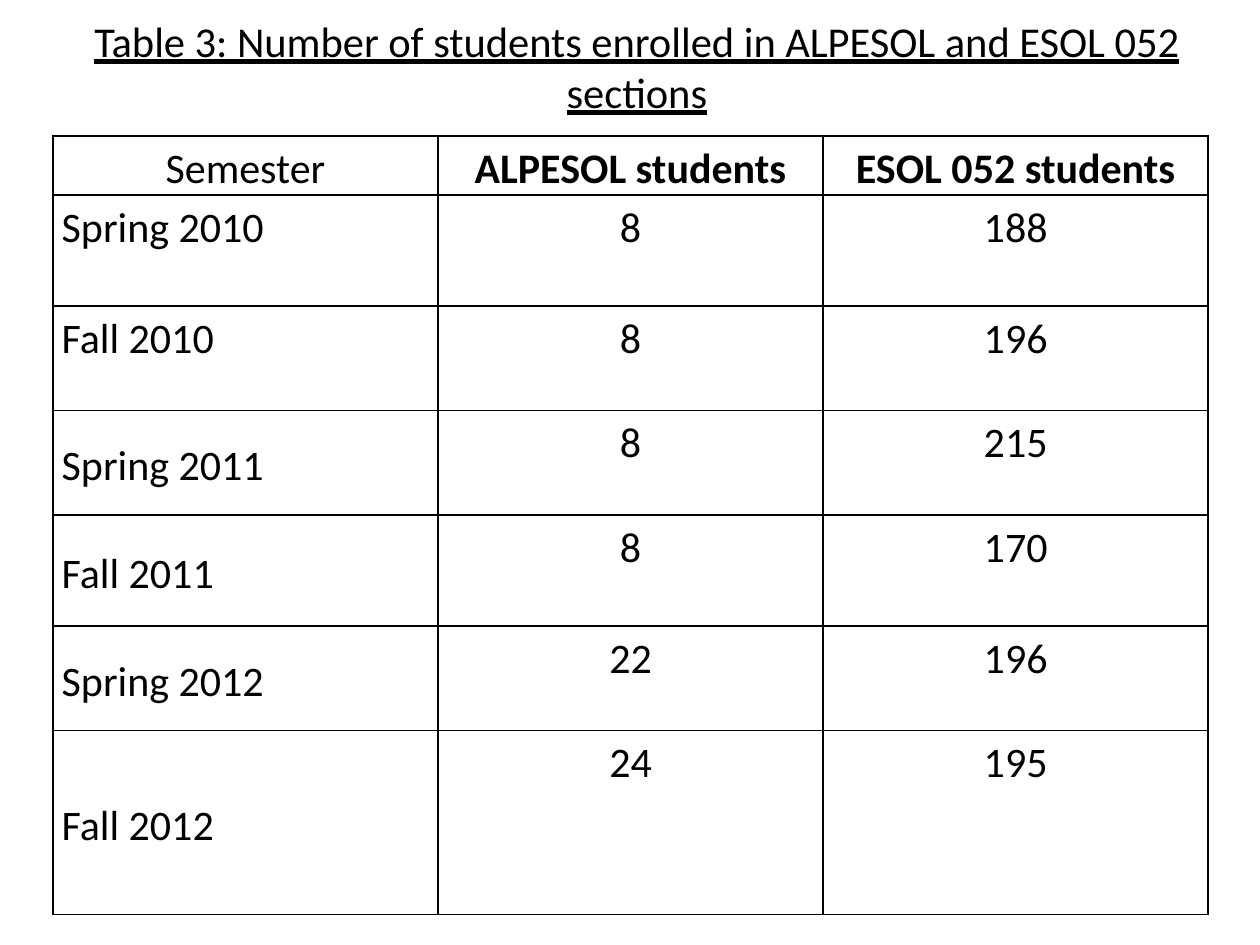
from lxml import etree
from pptx import Presentation
from pptx.dml.color import RGBColor
from pptx.enum.text import MSO_ANCHOR, MSO_AUTO_SIZE, PP_ALIGN
from pptx.oxml.ns import qn
from pptx.util import Inches, Pt

LEFT, CENTER = PP_ALIGN.LEFT, PP_ALIGN.CENTER
TOP, MIDDLE = MSO_ANCHOR.TOP, MSO_ANCHOR.MIDDLE
NO_AUTOFIT = MSO_AUTO_SIZE.NONE

FONT = "Calibri"
BLACK = "000000"
TITLE = "Table 3: Number of students enrolled in ALPESOL and ESOL 052 sections"
ROWS = [
    ("Semester", "ALPESOL students", "ESOL 052 students"),
    ("Spring 2010", "8", "188"),
    ("Fall 2010", "8", "196"),
    ("Spring 2011", "8", "215"),
    ("Fall 2011", "8", "170"),
    ("Spring 2012", "22", "196"),
    ("Fall 2012", "24", "195"),
]
ROW_HEIGHTS = [0.46, 0.88, 0.83, 0.83, 0.88, 0.83, 1.46]
FIRST_MIDDLE_ROW = 3  # from here on the semester names are centred vertically


def rgb(value):
    return RGBColor.from_string(value)


def add_run(p, text, size, bold=False, underline=False):
    r = p.add_run()
    r.text = text
    r.font.name = FONT
    r.font.size = Pt(size)
    r.font.bold = bold
    r.font.underline = underline
    r.font.color.rgb = rgb(BLACK)


def set_borders(cell, color, width):
    tc_pr = cell._tc.get_or_add_tcPr()
    for i, side in enumerate(("lnL", "lnR", "lnT", "lnB")):
        ln = etree.Element(qn(f"a:{side}"), w=str(Pt(width)))
        fill = etree.SubElement(ln, qn("a:solidFill"))
        etree.SubElement(fill, qn("a:srgbClr"), val=color)
        tc_pr.insert(i, ln)


def fill_title(slide, left, top, width, height):
    sp = slide.shapes.title
    sp.left, sp.top, sp.width, sp.height = left, top, width, height
    tf = sp.text_frame
    tf.word_wrap = True
    tf.auto_size = NO_AUTOFIT
    tf.vertical_anchor = MIDDLE
    p = tf.paragraphs[0]
    p.alignment = CENTER
    add_run(p, TITLE, 24.3, underline=True)


def fill_cell(cell, text, row, col):
    header = row == 0
    cell.margin_left = cell.margin_right = Inches(0.07)
    cell.margin_top = cell.margin_bottom = 0
    middle = header and col < 2 or col == 0 and row >= FIRST_MIDDLE_ROW
    cell.vertical_anchor = MIDDLE if middle else TOP
    cell.fill.background()
    set_borders(cell, BLACK, 1)
    p = cell.text_frame.paragraphs[0]
    p.alignment = CENTER if header or col else LEFT
    p.line_spacing = 1.15
    add_run(p, text, 24, bold=header and col > 0)


def add_enrollment_table(slide, left, top, width, height):
    table = slide.shapes.add_table(
        len(ROWS), len(ROWS[0]), left, top, width, height).table
    table.first_row = table.horz_banding = False
    for column in table.columns:
        column.width = width // len(ROWS[0])
    for i, (texts, row_height) in enumerate(zip(ROWS, ROW_HEIGHTS)):
        table.rows[i].height = Inches(row_height)
        for j, text in enumerate(texts):
            fill_cell(table.cell(i, j), text, i, j)


def main():
    prs = Presentation()
    prs.slide_width, prs.slide_height = Inches(10), Inches(7.5)
    slide = prs.slides.add_slide(prs.slide_layouts[5])
    fill_title(slide, Inches(0.58), Inches(0.07), Inches(8.95), Inches(0.9))
    add_enrollment_table(
        slide, Inches(0.42), Inches(1.08), Inches(9.17), Inches(6.17))
    prs.save("out.pptx")


if __name__ == "__main__":
    main()
